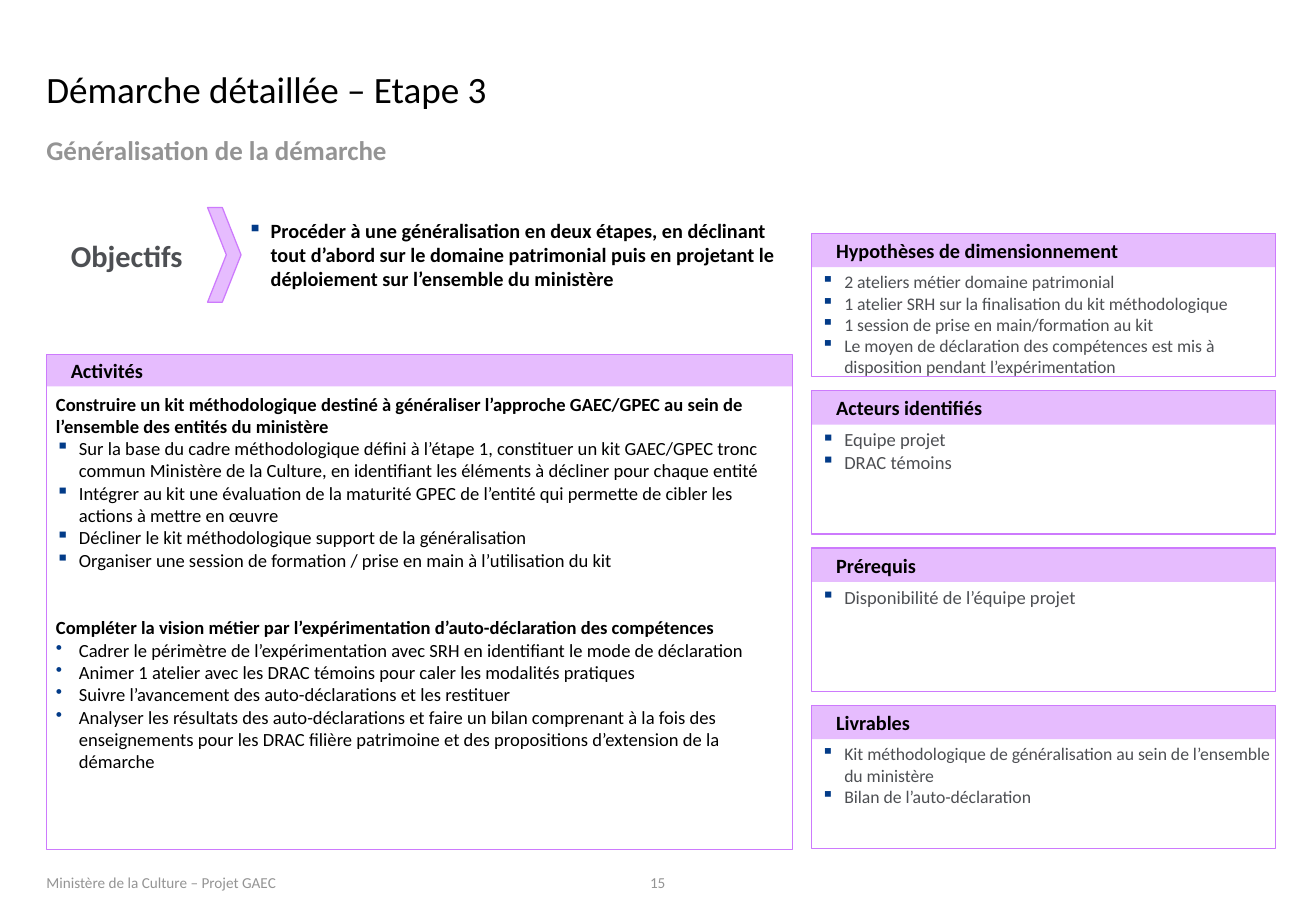
from lxml.etree import SubElement
from pptx import Presentation
from pptx.dml.color import RGBColor
from pptx.enum.shapes import MSO_SHAPE
from pptx.enum.text import MSO_ANCHOR, PP_ALIGN
from pptx.oxml.ns import qn
from pptx.util import Cm, Pt

BLACK, DARK, GREY = "000000", "4D4F53", "949494"
LILAC, VIOLET, NAVY = "E6BCFE", "CD7AFD", "023B88"

TITLE = "Démarche détaillée – Etape 3"
SUBTITLE = "Généralisation de la démarche"
FOOTER, PAGE = "Ministère de la Culture – Projet GAEC", "15"
GOAL = (
    "Procéder à une généralisation en deux étapes, en déclinant tout d’abord "
    "sur le domaine patrimonial puis en projetant le déploiement sur "
    "l’ensemble du ministère"
)
# heading, bullet sign, items
TASKS = [
    ("Construire un kit méthodologique destiné à généraliser l’approche "
     "GAEC/GPEC au sein de l’ensemble des entités du ministère", "▪", [
         "Sur la base du cadre méthodologique défini à l’étape 1, constituer un "
         "kit GAEC/GPEC tronc commun Ministère de la Culture, en identifiant "
         "les éléments à décliner pour chaque entité",
         "Intégrer au kit une évaluation de la maturité GPEC de l’entité qui "
         "permette de cibler les actions à mettre en œuvre",
         "Décliner le kit méthodologique support de la généralisation",
         "Organiser une session de formation / prise en main à l’utilisation du kit",
     ]),
    ("Compléter la vision métier par l’expérimentation d’auto-déclaration des "
     "compétences", "•", [
         "Cadrer le périmètre de l’expérimentation avec SRH en identifiant le "
         "mode de déclaration",
         "Animer 1 atelier avec les DRAC témoins pour caler les modalités pratiques",
         "Suivre l’avancement des auto-déclarations et les restituer",
         "Analyser les résultats des auto-déclarations et faire un bilan "
         "comprenant à la fois des enseignements pour les DRAC filière "
         "patrimoine et des propositions d’extension de la démarche",
     ]),
]
# title, text size, items
CARDS = [
    ("Hypothèses de dimensionnement", 10.5, [
        "2 ateliers métier domaine patrimonial",
        "1 atelier SRH sur la finalisation du kit méthodologique",
        "1 session de prise en main/formation au kit",
        "Le moyen de déclaration des compétences est mis à disposition "
        "pendant l’expérimentation",
    ]),
    ("Acteurs identifiés", 11, ["Equipe projet", "DRAC témoins"]),
    ("Prérequis", 11, ["Disponibilité de l’équipe projet"]),
    ("Livrables", 10.5, [
        "Kit méthodologique de généralisation au sein de l’ensemble du ministère",
        "Bilan de l’auto-déclaration",
    ]),
]

LEFT = 0.97
CARD_TOP, CARD_STEP = 4.88, 3.29

deck = Presentation()
deck.slide_width, deck.slide_height = Cm(27.51), Cm(19.05)
slide = deck.slides.add_slide(deck.slide_layouts[6])


def rgb(code):
    return RGBColor.from_string(code)


def line(text, size, color, bold=False, sign=None, before=0, align=PP_ALIGN.LEFT):
    """Describe one paragraph."""
    return text, size, color, bold, sign, before, align


def write(shape, lines, anchor=MSO_ANCHOR.TOP, pads=(0, 0, 0, 0)):
    """Fill a shape with lines; pads are left, top, right, bottom."""
    frame = shape.text_frame
    frame.word_wrap = True
    frame.vertical_anchor = anchor
    (frame.margin_left, frame.margin_top,
     frame.margin_right, frame.margin_bottom) = map(Cm, pads)
    for i, (text, size, color, bold, sign, before, align) in enumerate(lines):
        par = frame.add_paragraph() if i else frame.paragraphs[0]
        par.text = text
        par.alignment = align
        if before:
            par.space_before = Pt(before)
        if sign:
            props = par._p.get_or_add_pPr()
            props.set("marL", str(Cm(0.48)))
            props.set("indent", str(-Cm(0.48)))
            tint = SubElement(props, qn("a:buClr"))
            SubElement(tint, qn("a:srgbClr")).set("val", NAVY)
            SubElement(props, qn("a:buChar")).set("char", sign)
        font = par.font
        font.name, font.size, font.bold = "Calibri", Pt(size), bold
        font.color.rgb = rgb(color)


def label(box, item, anchor=MSO_ANCHOR.TOP, pads=(0, 0, 0, 0)):
    write(slide.shapes.add_textbox(*map(Cm, box)), [item], anchor, pads)


def block(kind, box, fill=None, edge=None):
    shape = slide.shapes.add_shape(kind, *map(Cm, box))
    shape.shadow.inherit = False
    if fill:
        shape.fill.solid()
        shape.fill.fore_color.rgb = rgb(fill)
    else:
        shape.fill.background()
    if edge:
        shape.line.color.rgb = rgb(edge)
        shape.line.width = Pt(0.75)
    else:
        shape.line.fill.background()
    return shape


def panel(box, bar, title, lines):
    """Draw a framed box with a title bar of the given height."""
    left, top, width, _ = box
    head = block(MSO_SHAPE.RECTANGLE, (left, top, width, bar), LILAC)
    write(head, [line(title, 12, BLACK, True)], MSO_ANCHOR.MIDDLE, (0.51, 0.1, 0, 0.1))
    body = block(MSO_SHAPE.RECTANGLE, box, edge=VIOLET)
    write(body, lines, pads=(0.2, 0.79, 0.1, 0.1))


label((LEFT, 0.53, 25.58, 1.8), line(TITLE, 22, BLACK), MSO_ANCHOR.BOTTOM)
label((LEFT, 2.79, 25.58, 0.94), line(SUBTITLE, 16, GREY, True))
label((LEFT, 18.01, 6.3, 0.63), line(FOOTER, 9, GREY), MSO_ANCHOR.BOTTOM)
label((13.13, 18.06, 1.24, 0.58), line(PAGE, 9, GREY, align=PP_ALIGN.CENTER),
      MSO_ANCHOR.BOTTOM)

label((LEFT, 4.24, 3.4, 2.21), line("Objectifs", 18, DARK, True),
      MSO_ANCHOR.MIDDLE, (0.51, 0.1, 0, 0.1))
arrow = block(MSO_SHAPE.CHEVRON, (4.34, 4.34, 0.7, 1.98), LILAC, VIOLET)
arrow.adjustments[0] = 0.56
label((5.08, 4.22, 11.46, 2.21), line(GOAL, 12, BLACK, True, "▪"),
      MSO_ANCHOR.MIDDLE, (0.1, 0.1, 0.1, 0.1))

steps = []
for heading, sign, items in TASKS:
    steps.append(line(heading, 11, BLACK, True, before=27 if steps else 0))
    steps += [line(item, 11, BLACK, sign=sign) for item in items]
panel((LEFT, 7.42, 15.6, 10.34), 0.66, "Activités", steps)

for i, (title, size, items) in enumerate(CARDS):
    panel((16.97, CARD_TOP + i * CARD_STEP, 9.7, 3), 0.71, title,
          [line(item, size, DARK, sign="▪") for item in items])

deck.save("out.pptx")
